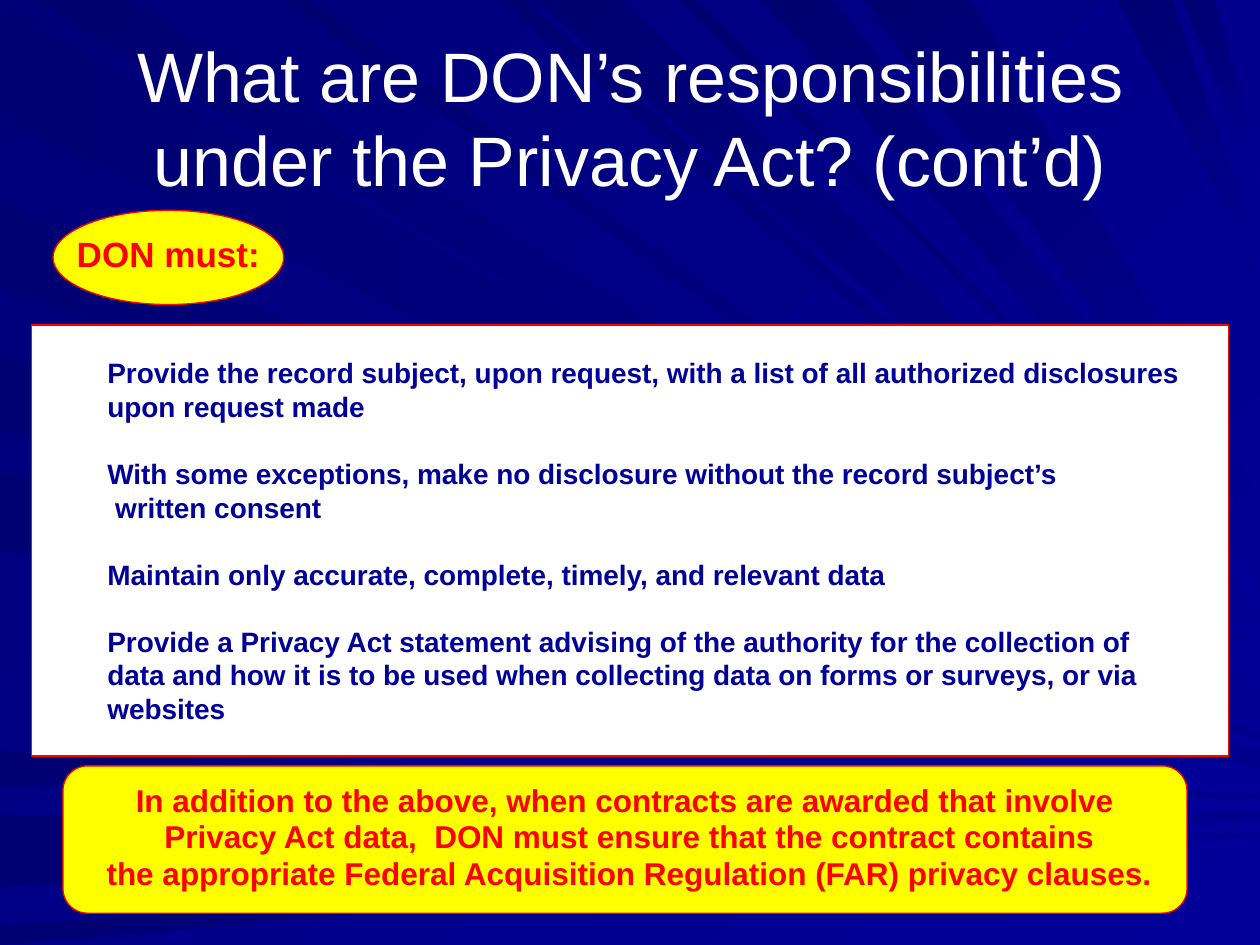
from dataclasses import dataclass

from lxml.etree import SubElement
from pptx import Presentation
from pptx.dml.color import RGBColor
from pptx.enum.shapes import MSO_SHAPE as SHAPE
from pptx.enum.text import MSO_ANCHOR as ANCHOR, MSO_AUTO_SIZE as FIT, PP_ALIGN as ALIGN
from pptx.oxml.ns import qn
from pptx.util import Cm, Pt


@dataclass(frozen=True)
class Theme:
    font: str = "Arial"
    backdrop: tuple = ("000078", "000099")
    left_ray: tuple = ("000073", "00008C")
    top_ray: tuple = ("000070", "000092")
    white: str = "FFFFFF"
    navy: str = "000099"
    red: str = "FF0000"
    yellow: str = "FFFF00"
    title_pt: int = 40
    badge_pt: int = 20
    note_pt: int = 18
    body_pt: int = 16
    outline_pt: float = 0.75


THEME = Theme()

# Rays in thousandths of the slide width: start and end on the near edge,
# then the height at which the ray meets the right edge
LEFT_RAYS = [(2, 93, 570), (159, 228, 585), (278, 342, 599), (374, 437, 606),
             (596, 623, 632), (647, 704, 647), (735, 750, 662)]
TOP_RAYS = [(26, 101, 563), (225, 247, 550), (398, 416, 518), (426, 492, 493),
            (540, 552, 462), (606, 661, 446), (686, 770, 409), (887, 930, 210),
            (939, 964, 140)]

DUTIES = [
    "Provide the record subject, upon request, with a list of all authorized disclosures\v"
    "upon request made",
    "With some exceptions, make no disclosure without the record subject’s\v written consent",
    "Maintain only accurate, complete, timely, and relevant data",
    "Provide a Privacy Act statement advising of the authority for the collection of\v"
    "data and how it is to be used when collecting data on forms or surveys, or via\v"
    "websites",
]
NOTE = [
    "In addition to the above, when contracts are awarded that involve",
    " Privacy Act data,  DON must ensure that the contract contains",
    " the appropriate Federal Acquisition Regulation (FAR) privacy clauses.",
]


def rgb(code):
    return RGBColor.from_string(code)


def paint_gradient(fill, colours, angle):
    """Two-colour gradient at a clockwise angle."""
    fill.gradient()
    fill.gradient_angle = -angle % 360
    for stop, colour, position in zip(fill.gradient_stops, colours, (0, 1)):
        stop.color.rgb = rgb(colour)
        stop.position = position


def place(sp, box):
    sp.left, sp.top, sp.width, sp.height = box


def write(sp, lines, size, colour, bold=True, align=ALIGN.CENTER, leading=1.0, gap=0, wrap=True):
    tf = sp.text_frame
    tf.auto_size = FIT.NONE
    tf.word_wrap = wrap
    tf.vertical_anchor = ANCHOR.MIDDLE
    tf.text = "\n".join(lines)
    for i, p in enumerate(tf.paragraphs):
        p.alignment = align
        p.line_spacing = leading
        p.space_before = Pt(gap if i else 0)
        for r in p.runs:
            r.font.name, r.font.size, r.font.bold = THEME.font, Pt(size), bold
            r.font.color.rgb = rgb(colour)


def panel_style(sp, colour):
    sp.fill.solid()
    sp.fill.fore_color.rgb = rgb(colour)
    sp.line.color.rgb = rgb(THEME.red)
    sp.line.width = Pt(THEME.outline_pt)


def add_ray(group, box, base, tip, tip_height, colours, angle):
    """Wedge from a base on the left or top edge to a narrow tip on the right edge."""
    left, top, width, _ = box
    upper, lower = (1000, tip - tip_height / 2), (1000, tip + tip_height / 2)
    builder = group.shapes.build_freeform(*base[0], scale=width / 1000)
    builder.add_line_segments([base[1], upper, lower], close=True)
    ray = builder.convert_to_shape(left, top)
    ray.shadow.inherit = False
    paint_gradient(ray.fill, colours, angle)
    ray.line.fill.background()


def add_backdrop(slide, box):
    paint_gradient(slide.background.fill, THEME.backdrop, 45)
    group = slide.shapes.add_group_shape()
    for start, end, tip in LEFT_RAYS:
        add_ray(group, box, [(0, end), (0, start)], tip, (end - start) / 10, THEME.left_ray, 0)
    for start, end, tip in TOP_RAYS:
        add_ray(group, box, [(start, 0), (end, 0)], tip, (end - start) / 3, THEME.top_ray, 45)
    # Send the rays behind the placeholders
    slide.shapes._spTree.insert(2, group._element)


def add_title(slide, box):
    sp = slide.shapes.title
    place(sp, box)
    write(sp, ["What are DON’s responsibilities under the Privacy Act? (cont’d)"],
          THEME.title_pt, THEME.white, bold=False)


def add_duties(slide, box):
    sp = slide.placeholders[1]
    place(sp, box)
    panel_style(sp, THEME.white)
    write(sp, DUTIES, THEME.body_pt, THEME.navy, align=ALIGN.LEFT, gap=1.2 * THEME.body_pt)
    for p in sp.text_frame.paragraphs:
        pPr = p._p.get_or_add_pPr()
        pPr.set("marL", str(Cm(1.27)))
        pPr.set("indent", "0")
        SubElement(pPr, qn("a:buNone"))


def add_callout(slide, box, kind, lines, size):
    sp = slide.shapes.add_shape(kind, *box)
    sp.shadow.inherit = False
    panel_style(sp, THEME.yellow)
    write(sp, lines, size, THEME.red, leading=0.8, gap=0.2 * size, wrap=False)


def main():
    prs = Presentation()
    prs.slide_width, prs.slide_height = Cm(25.4), Cm(19.05)
    slide = prs.slides.add_slide(prs.slide_layouts[1])
    add_backdrop(slide, (Cm(0), Cm(0), prs.slide_width, prs.slide_height))
    add_title(slide, (Cm(1.27), Cm(0.76), Cm(22.86), Cm(3.18)))
    add_duties(slide, (Cm(0.64), Cm(6.55), Cm(24.13), Cm(8.69)))
    add_callout(slide, (Cm(1.07), Cm(4.24), Cm(4.65), Cm(1.9)),
                SHAPE.OVAL, ["DON must:"], THEME.badge_pt)
    add_callout(slide, (Cm(1.27), Cm(15.44), Cm(22.66), Cm(2.97)),
                SHAPE.ROUNDED_RECTANGLE, NOTE, THEME.note_pt)
    prs.save("out.pptx")


if __name__ == "__main__":
    main()
